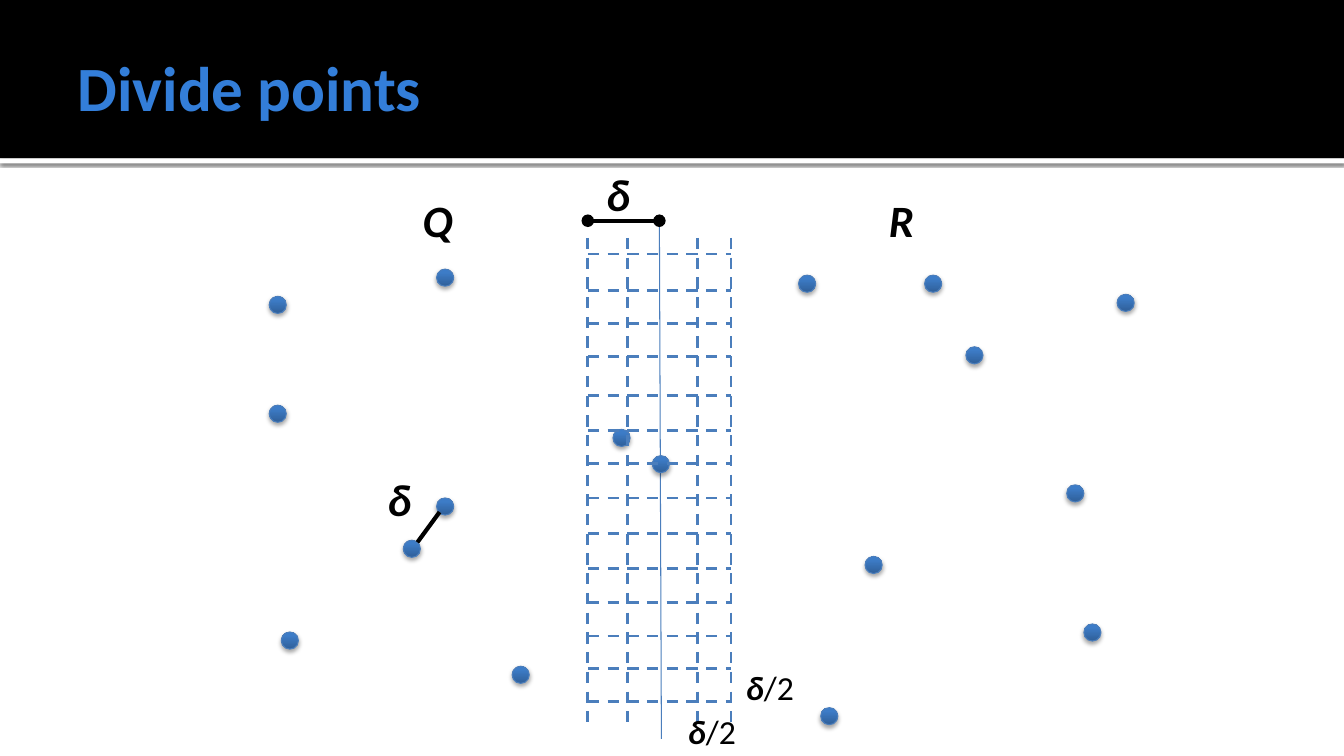
"""Build the slide that divides points into halves Q and R around a gridded strip."""
from dataclasses import dataclass

import lxml.etree
import pptx
import pptx.dml.color
import pptx.enum.dml
import pptx.enum.shapes
import pptx.enum.text
import pptx.oxml.ns
import pptx.util

Inches = pptx.util.Inches
Pt = pptx.util.Pt
Align = pptx.enum.text.PP_ALIGN
qn = pptx.oxml.ns.qn

COLORS = {"ink": "000000", "paper": "FFFFFF", "title": "337ED9", "edge": "4B7EBC",
          "dot_low": "2F5F99", "dot_mid": "3D7CC7", "dot_high": "3A7CCB"}
DOT_STOPS = ((0, "dot_low"), (80, "dot_mid"), (100, "dot_high"))
DOT_SIZE = 0.17
STRIP_LEFT, STRIP_RIGHT, STRIP_TOP, STRIP_BOTTOM = 5.83, 7.25, 2.36, 7.19
EMPHASIS = {"bold": True, "italic": True}


@dataclass(frozen=True)
class Shadow:
    """Hold a downward shadow: opacity in percent, lengths in points."""
    opacity: int
    blur: float
    distance: float


@dataclass(frozen=True)
class Band:
    """Hold a full-width header band."""
    top: float
    height: float
    color: str
    shadow: Shadow | None = None


@dataclass(frozen=True)
class Segment:
    """Hold a straight line and its stroke."""
    start: tuple[float, float]
    end: tuple[float, float]
    color: str = "edge"
    width: float = 2
    dashed: bool = False
    oval_ends: bool = False


@dataclass(frozen=True)
class Label:
    """Hold an emphasised symbol with an optional plain suffix."""
    left: float
    top: float
    symbol: str
    suffix: str = ""
    size: int = 32
    height: float = 0.64
    align: Align = Align.CENTER


BANDS = (Band(1.57, 0.05, "paper", Shadow(60, 2.5, 0.8)), Band(0, 1.57, "ink"))
DOT_SHADOW = Shadow(35, 3.1, 1.8)
Q_POINTS = ((2.67, 2.94), (2.67, 4.02), (4.33, 2.67), (4.33, 4.94), (2.79, 6.27),
            (6.08, 4.26), (4, 5.36), (5.08, 6.61))
R_POINTS = ((9.17, 2.73), (10.75, 6.19), (9.58, 3.44), (8.58, 5.52), (7.92, 2.73),
            (6.47, 4.52), (8.14, 7.02), (10.58, 4.81), (11.08, 2.92))
DIVIDER = Segment((6.54, 2.18), (6.56, 7.33), width=0.75)
CLOSEST_PAIR = Segment((4.14, 5.38), (4.36, 5.08), "ink", 3)
STRIP_WIDTH = Segment((STRIP_LEFT, 2.19), (6.54, 2.19), "ink", 3, oval_ends=True)
COLUMNS = (STRIP_LEFT, STRIP_RIGHT, 6.92, 6.22)
ROWS = (2.52, 2.88, 3.21, 3.54, 3.92, 4.27, 4.6, 4.94, 5.29, 5.64, 5.98, 6.31, 6.63, 6.96)
GRID = [Segment((x, STRIP_TOP), (x, STRIP_BOTTOM), dashed=True) for x in COLUMNS]
GRID += [Segment((STRIP_LEFT, y), (STRIP_RIGHT, y), dashed=True) for y in ROWS]
LABELS = (
    Label(3.88, 1.86, "Q"),
    Label(8.48, 1.86, "R"),
    Label(3.5, 4.63, "δ"),
    Label(5.67, 1.61, "δ"),
    Label(7.3, 6.57, "δ", "/2", 24, 0.5, Align.LEFT),
    Label(6.6, 7, "δ", "/2", 24, 0.5),
)


def rgb(name: str) -> pptx.dml.color.RGBColor:
    """Return a named colour."""
    return pptx.dml.color.RGBColor.from_string(COLORS[name])


def apply(target, values: dict) -> None:
    """Set every attribute in values on the target."""
    for attribute, value in values.items():
        setattr(target, attribute, value)


def format_font(font, color: str, **values) -> None:
    """Format a font in the slide's typeface."""
    apply(font, {"name": "Calibri", **values})
    font.color.rgb = rgb(color)


def add_child(parent, tag: str, **attributes):
    """Append a DrawingML element to the parent."""
    return lxml.etree.SubElement(parent, qn(f"a:{tag}"), attributes)


def cast_shadow(shape, shadow: Shadow) -> None:
    """Give a shape an explicit downward shadow."""
    effects = shape._element.spPr.find(qn("a:effectLst"))
    outer = add_child(effects, "outerShdw", blurRad=str(Pt(shadow.blur)),
                      dist=str(Pt(shadow.distance)), dir="5400000", rotWithShape="0")
    tint = add_child(outer, "srgbClr", val=COLORS["ink"])
    add_child(tint, "alpha", val=str(shadow.opacity * 1000))


def draw_band(slide, band: Band) -> None:
    """Draw a header band across the slide."""
    shape = slide.shapes.add_shape(pptx.enum.shapes.MSO_SHAPE.RECTANGLE, 0, Inches(band.top),
                                   Inches(13.33), Inches(band.height))
    shape.fill.solid()
    shape.fill.fore_color.rgb = rgb(band.color)
    shape.line.fill.background()
    shape.shadow.inherit = False
    if band.shadow:
        cast_shadow(shape, band.shadow)


def draw_point(slide, left: float, top: float) -> None:
    """Draw one shaded point."""
    dot = slide.shapes.add_shape(pptx.enum.shapes.MSO_SHAPE.OVAL, Inches(left), Inches(top),
                                 Inches(DOT_SIZE), Inches(DOT_SIZE))
    dot.fill.gradient()
    dot.fill.gradient_angle = 90
    stops = dot._element.spPr.find(f"{qn('a:gradFill')}/{qn('a:gsLst')}")
    for stop in list(stops):
        stops.remove(stop)
    for position, color in DOT_STOPS:
        add_child(add_child(stops, "gs", pos=str(position * 1000)), "srgbClr", val=COLORS[color])
    dot.line.color.rgb = rgb("edge")
    dot.line.width = Pt(0.75)
    dot.shadow.inherit = False
    cast_shadow(dot, DOT_SHADOW)


def draw_segment(slide, segment: Segment) -> None:
    """Draw a straight line without a shadow."""
    ends = [Inches(value) for value in (*segment.start, *segment.end)]
    connector = slide.shapes.add_connector(pptx.enum.shapes.MSO_CONNECTOR.STRAIGHT, *ends)
    connector.line.color.rgb = rgb(segment.color)
    connector.line.width = Pt(segment.width)
    if segment.dashed:
        connector.line.dash_style = pptx.enum.dml.MSO_LINE.DASH
    if segment.oval_ends:
        for tag in ("headEnd", "tailEnd"):
            add_child(connector.line._ln, tag, type="oval")
    add_child(connector._element.spPr, "effectLst")


def draw_label(slide, label: Label) -> None:
    """Draw a symbol label."""
    frame = slide.shapes.add_textbox(Inches(label.left), Inches(label.top), Inches(0.92),
                                     Inches(label.height)).text_frame
    frame.word_wrap = True
    paragraph = frame.paragraphs[0]
    paragraph.alignment = label.align
    for text, emphasis in ((label.symbol, EMPHASIS), (label.suffix, {})):
        if text:
            run = paragraph.add_run()
            run.text = text
            format_font(run.font, "ink", size=Pt(label.size), **emphasis)


def place_title(slide, text: str) -> None:
    """Fill the title placeholder and bring it above the bands."""
    title = slide.shapes.title
    apply(title, {"left": Inches(0.67), "top": Inches(0.17),
                  "width": Inches(12), "height": Inches(1.37)})
    frame = title.text_frame
    frame.text = text
    apply(frame, {"vertical_anchor": pptx.enum.text.MSO_ANCHOR.MIDDLE, "word_wrap": True,
                  "auto_size": pptx.enum.text.MSO_AUTO_SIZE.NONE,
                  "margin_left": Inches(0.1), "margin_right": Inches(0.05),
                  "margin_top": Inches(0.05), "margin_bottom": Inches(0.05)})
    frame.paragraphs[0].alignment = Align.LEFT
    format_font(frame.paragraphs[0].runs[0].font, "title", size=Pt(45), bold=True)
    slide.shapes._spTree.append(title._element)


def main() -> None:
    """Build and save the slide."""
    deck = pptx.Presentation()
    apply(deck, {"slide_width": Inches(13.33), "slide_height": Inches(7.5)})
    slide = deck.slides.add_slide(deck.slide_layouts[5])
    for band in BANDS:
        draw_band(slide, band)
    draw_segment(slide, DIVIDER)
    place_title(slide, "Divide points")
    for left, top in Q_POINTS + R_POINTS:
        draw_point(slide, left, top)
    for segment in (CLOSEST_PAIR, *GRID, STRIP_WIDTH):
        draw_segment(slide, segment)
    for label in LABELS:
        draw_label(slide, label)
    deck.save("out.pptx")


if __name__ == "__main__":
    main()
